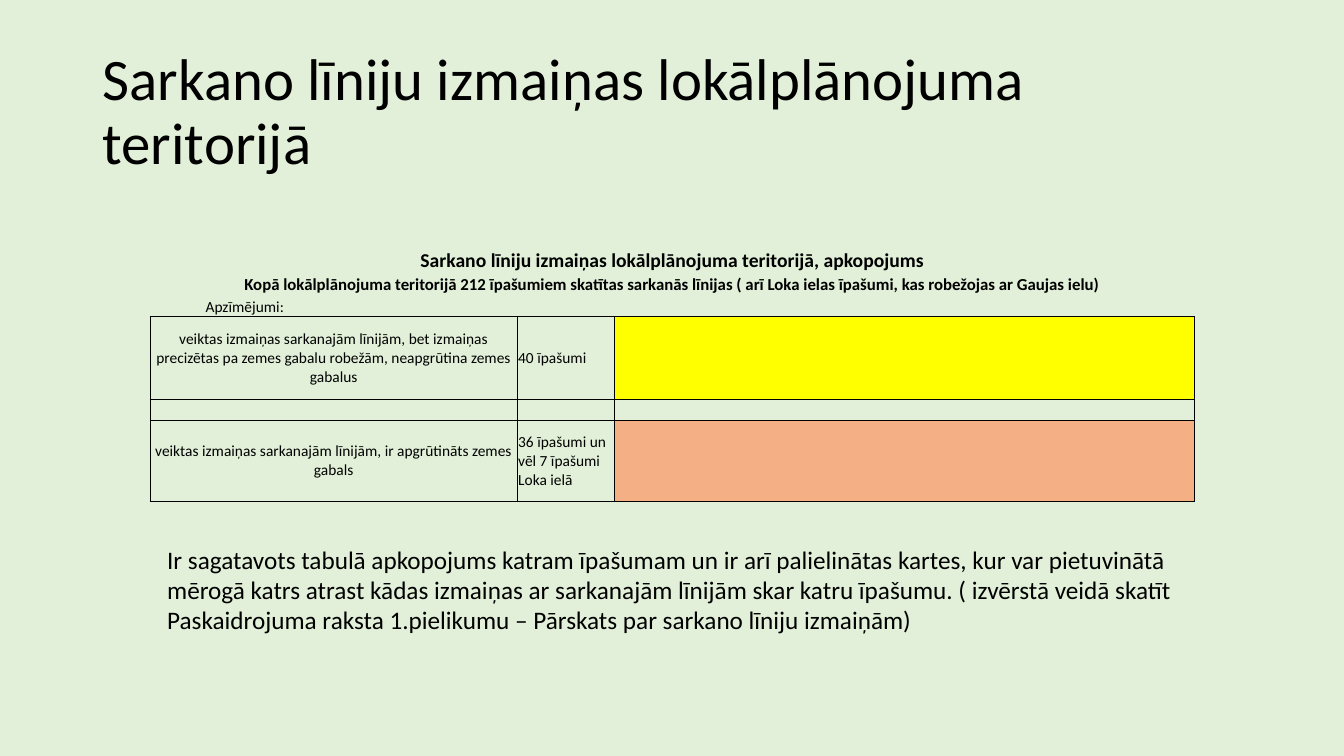
from lxml import etree
from pptx import Presentation
from pptx import util as u
from pptx.dml.color import RGBColor
from pptx.enum import text
from pptx.oxml.ns import qn

PX = 9144
BLACK = RGBColor(0x00, 0x00, 0x00)
MINT = RGBColor(0xE2, 0xF0, 0xD9)
YELLOW = RGBColor(0xFF, 0xFF, 0x00)
ORANGE = RGBColor(0xF4, 0xB0, 0x84)
MIDDLE = text.MSO_ANCHOR.MIDDLE
BOTTOM = text.MSO_ANCHOR.BOTTOM
LEFT = text.PP_ALIGN.LEFT
CENTER = text.PP_ALIGN.CENTER


def write(frame, words, size=11, bold=False, align=LEFT, spacing=None):
    paragraph = frame.paragraphs[0]
    paragraph.alignment = align
    if spacing:
        paragraph.line_spacing = spacing
    run = paragraph.add_run()
    run.text = words
    run.font.name = "Calibri"
    run.font.size = u.Pt(size)
    run.font.bold = bold
    run.font.color.rgb = BLACK


class Sheet:
    def __init__(self, deck):
        self.slide = deck.slides.add_slide(deck.slide_layouts[6])
        self.slide.background.fill.solid()
        self.slide.background.fill.fore_color.rgb = MINT

    def label(self, box, words, anchor=text.MSO_ANCHOR.TOP, **style):
        frame = self.slide.shapes.add_textbox(*(n * PX for n in box)).text_frame
        frame.word_wrap = True
        frame.vertical_anchor = anchor
        write(frame, words, **style)

    def grid(self, left, top, widths, heights):
        table = self.slide.shapes.add_table(
            len(heights), len(widths), left * PX, top * PX,
            sum(widths) * PX, sum(heights) * PX).table
        table.first_row = table.horz_banding = False
        for column, width in zip(table.columns, widths):
            column.width = width * PX
        for row, height in zip(table.rows, heights):
            row.height = height * PX
        return table

    def border(self, cell, sides):
        properties = cell._tc.get_or_add_tcPr()
        for side in "LRTB":
            line = etree.SubElement(properties, qn(f"a:ln{side}"), w=str(u.Pt(0.5)))
            if side in sides:
                solid = etree.SubElement(line, qn("a:solidFill"))
                etree.SubElement(solid, qn("a:srgbClr"), val=str(BLACK))
            else:
                etree.SubElement(line, qn("a:noFill"))

    def blank_cell(self, cell, sides):
        self.border(cell, sides)
        cell.fill.background()
        cell.margin_left = cell.margin_right = cell.margin_top = PX
        cell.margin_bottom = 0
        etree.SubElement(cell.text_frame.paragraphs[0]._p, qn("a:endParaRPr"), sz="1100")

    def entry(self, cell, words, anchor=MIDDLE, **style):
        cell.vertical_anchor = anchor
        write(cell.text_frame, words, **style)


def add_summary(sheet):
    summary = sheet.grid(149, 245, [54, 116, 88, 106, 96, 576], [26, 22, 21, 82, 21, 80])
    row_sides = ["", "", "B", "LRTB", "LRTB", "LRTB"]
    for row, sides in enumerate(row_sides):
        for column in range(len(summary.columns)):
            sheet.blank_cell(summary.cell(row, column), sides)
    for row, last in [(0, 5), (1, 5), (3, 3), (4, 3), (5, 3)]:
        summary.cell(row, 0).merge(summary.cell(row, last))

    headings = [
        ("Sarkano līniju izmaiņas lokālplānojuma teritorijā, apkopojums", 14),
        ("Kopā lokālplānojuma teritorijā 212 īpašumiem skatītas sarkanās līnijas "
         "( arī Loka ielas īpašumi, kas robežojas ar Gaujas ielu)", 12),
    ]
    for row, (heading, size) in enumerate(headings):
        sheet.entry(summary.cell(row, 0), heading, anchor=BOTTOM,
                    size=size, bold=True, align=CENTER)
    sheet.entry(summary.cell(2, 1), "Apzīmējumi:", anchor=BOTTOM)

    legend = [
        (3, "veiktas izmaiņas sarkanajām līnijām, bet izmaiņas precizētas pa zemes "
            "gabalu robežām, neapgrūtina zemes gabalus", "40 īpašumi", YELLOW),
        (5, "veiktas izmaiņas sarkanajām līnijām, ir apgrūtināts zemes gabals",
         "36 īpašumi un vēl 7 īpašumi Loka ielā", ORANGE),
    ]
    for row, meaning, count, colour in legend:
        sheet.entry(summary.cell(row, 0), meaning, align=CENTER)
        sheet.entry(summary.cell(row, 4), count)
        swatch = summary.cell(row, 5).fill
        swatch.solid()
        swatch.fore_color.rgb = colour


def main():
    deck = Presentation()
    deck.slide_width, deck.slide_height = 1333 * PX, 750 * PX
    sheet = Sheet(deck)
    sheet.label((92, 40, 1150, 145), "Sarkano līniju izmaiņas lokālplānojuma teritorijā",
                anchor=MIDDLE, size=42, spacing=0.9)
    add_summary(sheet)
    sheet.label((156, 535, 1028, 101),
                "Ir sagatavots tabulā apkopojums katram īpašumam un ir arī palielinātas "
                "kartes, kur var pietuvinātā mērogā katrs atrast kādas izmaiņas ar "
                "sarkanajām līnijām skar katru īpašumu. ( izvērstā veidā skatīt "
                "Paskaidrojuma raksta 1.pielikumu – Pārskats par sarkano līniju izmaiņām)",
                size=18)
    deck.save("out.pptx")


if __name__ == "__main__":
    main()
